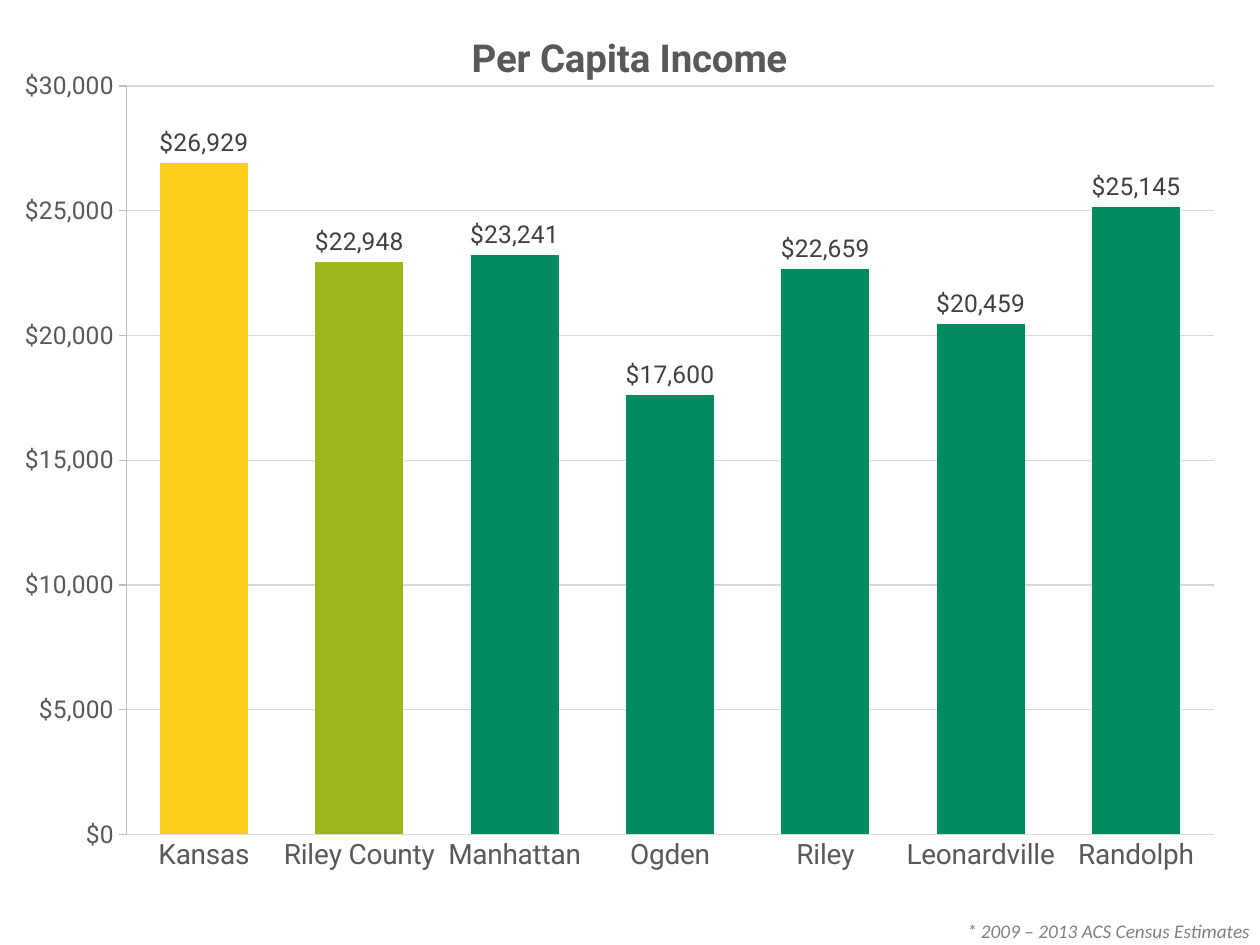
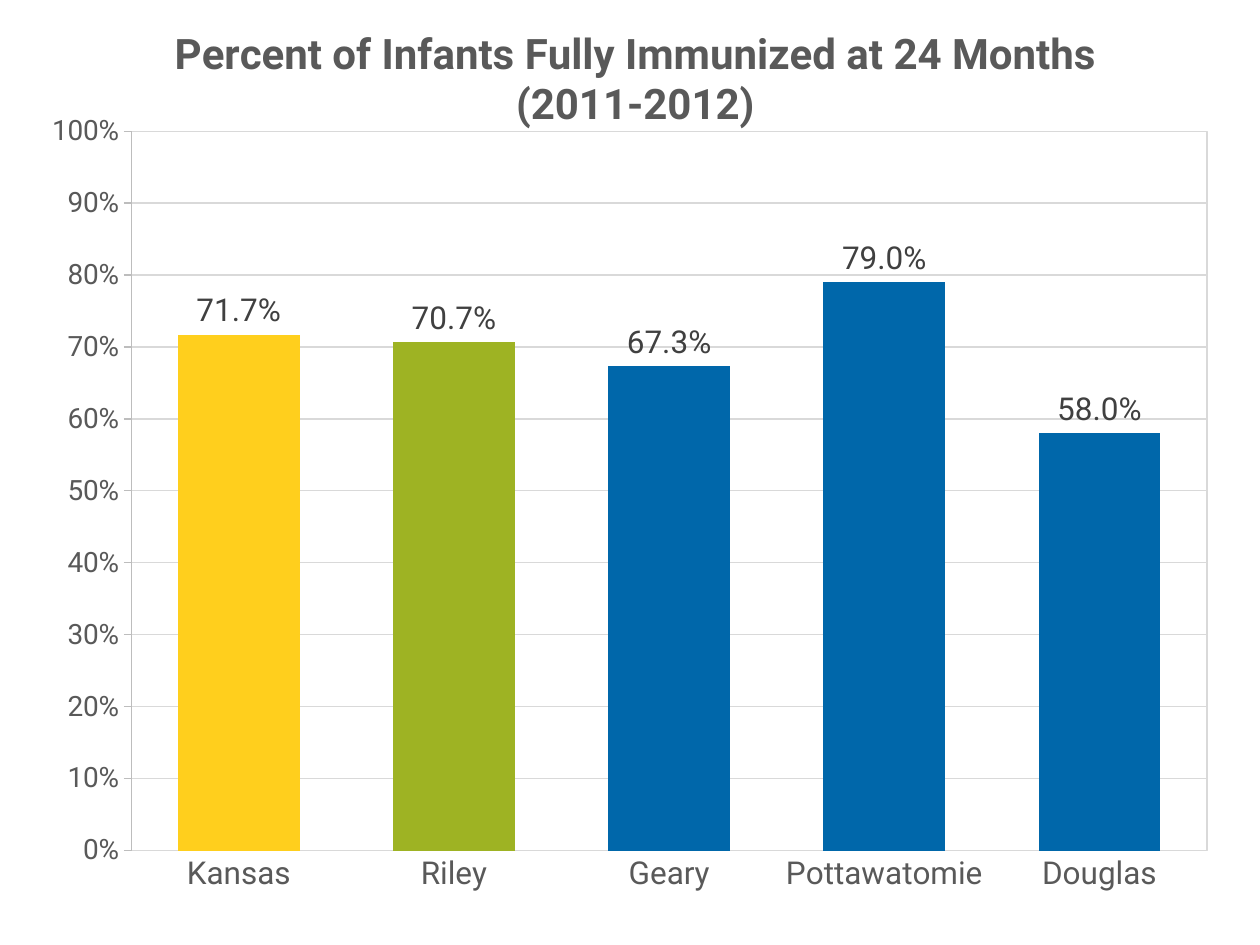
from dataclasses import dataclass

from lxml.etree import SubElement
from pptx import Presentation
from pptx.chart.chart import Chart
from pptx.chart.data import CategoryChartData
from pptx.dml.color import RGBColor
from pptx.enum.chart import XL_CHART_TYPE, XL_LABEL_POSITION, XL_TICK_MARK
from pptx.enum.text import PP_ALIGN
from pptx.oxml import parse_xml
from pptx.oxml.ns import nsdecls, qn
from pptx.slide import Slide
from pptx.util import Pt

COLORS = {
    "text": "595959",
    "label": "404040",
    "note": "808080",
    "grid": "D9D9D9",
    "axis": "BDBDBD",
    "state": "FFCF1D",
    "income_county": "9FB51D",
    "town": "008A5F",
    "health_county": "9EB323",
    "peer": "0067AA",
}
CHART_FONT = "Roboto"
NOTE_FONT = "Calibri"
LINE_WIDTH = Pt(0.75)


@dataclass
class BarChart:
    """Frame is in points on the slide; title_at and plot are in points within the frame."""
    title: str
    title_size: float
    title_at: tuple[float, float]
    frame: tuple[float, float, float, float]
    plot: tuple[float, float, float, float]
    bars: dict[str, float]
    county_color: str
    others_color: str
    axis_format: str
    label_format: str
    axis_max: float
    axis_step: float
    category_size: float
    value_size: float
    label_size: float
    framed_plot: bool = False


INCOME = BarChart(
    title="Per Capita Income",
    title_size=22,
    title_at=(265.5, 14.5),
    frame=(0, 0, 720, 540),
    plot=(72.2, 49.2, 621.4, 427.7),
    bars={"Kansas": 26929, "Riley County": 22948, "Manhattan": 23241,
          "Ogden": 17600, "Riley": 22659, "Leonardville": 20459,
          "Randolph": 25145},
    county_color="income_county",
    others_color="town",
    axis_format='"$"#,##0',
    label_format='"$"#,##0',
    axis_max=30000,
    axis_step=5000,
    category_size=16,
    value_size=14,
    label_size=14,
)
IMMUNIZATION = BarChart(
    title="Percent of Infants Fully Immunized at 24 Months (2011-2012)",
    title_size=24,
    title_at=(83.5, 10),
    frame=(12, 0, 702, 534),
    plot=(63, 75, 614.8, 411.2),
    bars={"Kansas": 0.717, "Riley": 0.707, "Geary": 0.673,
          "Pottawatomie": 0.79, "Douglas": 0.58},
    county_color="health_county",
    others_color="peer",
    axis_format="0%",
    label_format="0.0%",
    axis_max=1,
    axis_step=0.1,
    category_size=18,
    value_size=16,
    label_size=18,
    framed_plot=True,
)


def rgb(name: str) -> RGBColor:
    return RGBColor.from_string(COLORS[name])


def style_font(font, size: float, color: str, name: str = CHART_FONT) -> None:
    font.name = name
    font.size = Pt(size)
    font.color.rgb = rgb(color)


def style_line(line, color: str) -> None:
    line.color.rgb = rgb(color)
    line.width = LINE_WIDTH


def set_layout(parent, after: str, **settings: float | str) -> None:
    """Give a chart part a manual layout, placed right after one of its children."""
    for old in parent.findall(qn("c:layout")):
        parent.remove(old)
    layout = parse_xml(f"<c:layout {nsdecls('c')}><c:manualLayout/></c:layout>")
    for tag, value in settings.items():
        SubElement(layout[0], qn(f"c:{tag}")).set("val", str(value))
    anchor = parent.find(qn(after)) if after else None
    parent.insert(0 if anchor is None else parent.index(anchor) + 1, layout)


def add_title(chart: Chart, spec: BarChart) -> None:
    chart.has_title = True
    p = chart.chart_title.text_frame.paragraphs[0]
    p.text = spec.title
    p.alignment = PP_ALIGN.CENTER
    style_font(p.font, spec.title_size, "text")
    p.font.bold = True
    x, y = spec.title_at
    _, _, width, height = spec.frame
    set_layout(chart.chart_title._element, "c:tx",
               xMode="edge", yMode="edge", x=x / width, y=y / height)


def style_plot_area(chart: Chart, spec: BarChart) -> None:
    area = chart._chartSpace.chart.plotArea
    x, y, w, h = spec.plot
    _, _, width, height = spec.frame
    set_layout(area, "", layoutTarget="inner", xMode="edge", yMode="edge",
               x=x / width, y=y / height, w=w / width, h=h / height)
    if spec.framed_plot:
        area.append(parse_xml(
            f"<c:spPr {nsdecls('c', 'a')}><a:noFill/><a:ln w=\"{LINE_WIDTH}\">"
            f"<a:solidFill><a:srgbClr val=\"{COLORS['grid']}\"/></a:solidFill>"
            "</a:ln></c:spPr>"))


def style_axes(chart: Chart, spec: BarChart) -> None:
    categories, values = chart.category_axis, chart.value_axis
    for axis, size, color, tick in (
        (categories, spec.category_size, "grid", XL_TICK_MARK.NONE),
        (values, spec.value_size, "axis", XL_TICK_MARK.OUTSIDE),
    ):
        style_font(axis.tick_labels.font, size, "text")
        style_line(axis.format.line, color)
        axis.major_tick_mark = tick
        axis.minor_tick_mark = XL_TICK_MARK.NONE
    values.minimum_scale = 0
    values.maximum_scale = spec.axis_max
    values.major_unit = spec.axis_step
    values.has_major_gridlines = True
    style_line(values.major_gridlines.format.line, "grid")
    values.tick_labels.number_format = spec.axis_format
    values.tick_labels.number_format_is_linked = False


def style_bars(chart: Chart, spec: BarChart) -> None:
    plot = chart.plots[0]
    plot.gap_width = 77
    plot.vary_by_categories = False
    series = plot.series[0]
    series.invert_if_negative = False
    others = [spec.others_color] * (len(spec.bars) - 2)
    for i, color in enumerate(["state", spec.county_color, *others]):
        fill = series.points[i].format.fill
        fill.solid()
        fill.fore_color.rgb = rgb(color)
    labels = series.data_labels
    labels.show_value = True
    labels.position = XL_LABEL_POSITION.OUTSIDE_END
    labels.number_format = spec.label_format
    labels.number_format_is_linked = False
    style_font(labels.font, spec.label_size, "label")


def add_bar_chart(slide: Slide, spec: BarChart) -> None:
    data = CategoryChartData()
    data.categories = list(spec.bars)
    data.add_series("Series 1", list(spec.bars.values()))
    chart = slide.shapes.add_chart(
        XL_CHART_TYPE.COLUMN_CLUSTERED, *map(Pt, spec.frame), data).chart
    chart.has_legend = False
    chart.font.name = NOTE_FONT
    chart.font.size = Pt(10)
    add_title(chart, spec)
    style_plot_area(chart, spec)
    style_axes(chart, spec)
    style_bars(chart, spec)


def add_source_note(slide: Slide, text: str) -> None:
    tf = slide.shapes.add_textbox(Pt(546), Pt(522), Pt(174), Pt(18)).text_frame
    tf.word_wrap = False
    tf.margin_left = 0
    tf.margin_right = Pt(5.5)
    p = tf.paragraphs[0]
    p.text = text
    p.alignment = PP_ALIGN.RIGHT
    style_font(p.font, 11, "note", NOTE_FONT)
    p.font.italic = True


def main() -> None:
    prs = Presentation()
    prs.slide_width, prs.slide_height = Pt(720), Pt(540)
    blank = prs.slide_layouts[6]
    income = prs.slides.add_slide(blank)
    add_source_note(income, "* 2009 – 2013 ACS Census Estimates")
    add_bar_chart(income, INCOME)
    add_bar_chart(prs.slides.add_slide(blank), IMMUNIZATION)
    prs.save("out.pptx")


if __name__ == "__main__":
    main()
